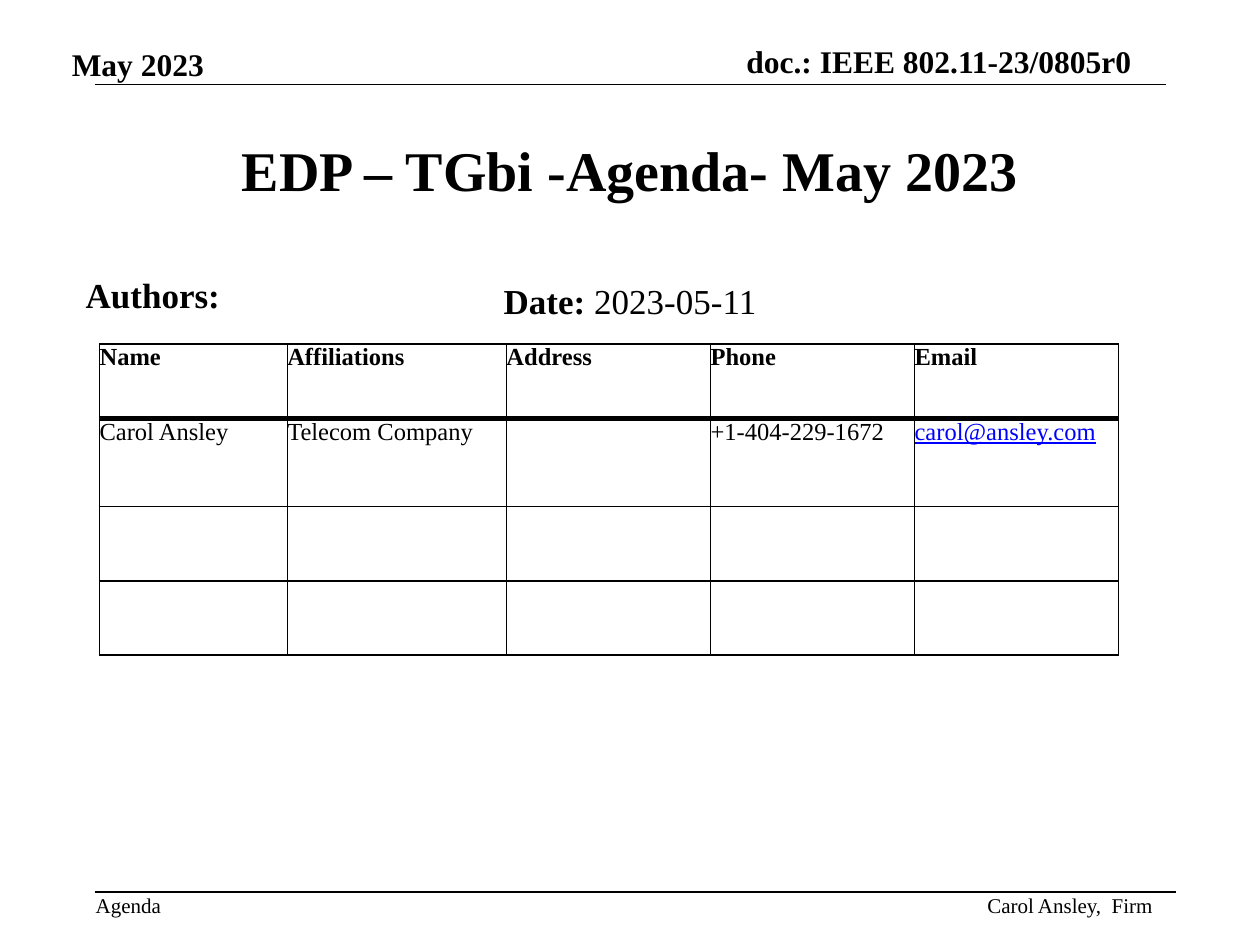
from dataclasses import dataclass

from lxml.etree import SubElement
from pptx import Presentation
from pptx.dml.color import RGBColor
from pptx.enum.shapes import MSO_CONNECTOR
from pptx.enum.text import MSO_ANCHOR as Anchor, MSO_AUTO_SIZE as Fit, PP_ALIGN as Align
from pptx.oxml.ns import qn
from pptx.util import Inches, Pt

BLACK = RGBColor(0x00, 0x00, 0x00)
BLUE = RGBColor(0x00, 0x00, 0xFF)
FONT = "Times New Roman"
THIN, THICK = 0.96, 3


@dataclass
class Label:
    text: str
    left: float
    top: float
    width: float
    height: float
    size: int
    bold: bool = False
    align: Align = Align.LEFT
    inset: float = 0
    wrap: bool = False
    anchor: Anchor = Anchor.TOP


@dataclass
class Rule:
    left: float
    right: float
    y: float


LABELS = [
    Label("May 2023", 0.57, 0.36, 1.06, 0.3, 18, True, anchor=Anchor.BOTTOM),
    Label("doc.: IEEE 802.11-23/0805r0", 5.88, 0.33, 3.1, 0.3, 18, True,
          Align.RIGHT, anchor=Anchor.BOTTOM),
    Label("Agenda", 0.76, 7.08, 0.53, 0.2, 12),
    Label("Carol Ansley,  Firm", 7.85, 7.08, 1.3, 0.2, 12, align=Align.RIGHT,
          anchor=Anchor.BOTTOM),
    Label("Authors:", 0.63, 2.12, 1.48, 0.41, 20, True, inset=0.05, wrap=True),
]
RULES = [Rule(0.75, 9.25, 0.67), Rule(0.75, 9.33, 7.08)]

COLS = [1.49, 1.74, 1.62, 1.62, 1.62]
ROWS = [0.59, 0.7, 0.59, 0.59]
CELLS = [
    ["Name", "Affiliations", "Address", "Phone", "Email"],
    ["Carol Ansley", "Telecom Company", "", "+1-404-229-1672", "carol@ansley.com"],
]


def add_run(para, text: str, size: int, bold: bool = False, color: RGBColor = BLACK):
    run = para.add_run()
    run.text = text
    font = run.font
    font.name, font.size, font.bold = FONT, Pt(size), bold
    font.color.rgb = color
    return run


def set_frame(frame, inset: float, anchor: Anchor, wrap: bool = True) -> None:
    frame.auto_size = Fit.NONE
    frame.word_wrap = wrap
    frame.vertical_anchor = anchor
    frame.margin_left = frame.margin_right = Inches(inset)
    frame.margin_top = frame.margin_bottom = Inches(inset)


def place(shape, left: float, top: float, width: float, height: float) -> None:
    shape.left, shape.top = Inches(left), Inches(top)
    shape.width, shape.height = Inches(width), Inches(height)


def add_label(slide, item: Label) -> None:
    box = slide.shapes.add_textbox(Inches(item.left), Inches(item.top),
                                   Inches(item.width), Inches(item.height))
    set_frame(box.text_frame, item.inset, item.anchor, item.wrap)
    para = box.text_frame.paragraphs[0]
    para.alignment = item.align
    add_run(para, item.text, item.size, item.bold)


def add_rule(slide, rule: Rule) -> None:
    line = slide.shapes.add_connector(MSO_CONNECTOR.STRAIGHT, Inches(rule.left),
                                      Inches(rule.y), Inches(rule.right), Inches(rule.y))
    line.line.color.rgb = BLACK
    line.line.width = Pt(1)
    SubElement(line._element.spPr, qn("a:effectLst"))


def set_edges(cell, top: float, bottom: float) -> None:
    props = cell._tc.get_or_add_tcPr()
    for side, width in zip("LRTB", (THIN, THIN, top, bottom)):
        edge = SubElement(props, qn(f"a:ln{side}"), w=str(Pt(width)))
        fill = SubElement(edge, qn("a:solidFill"))
        SubElement(fill, qn("a:srgbClr"), val=str(BLACK))


def add_people(slide) -> None:
    table = slide.shapes.add_table(len(ROWS), len(COLS), Inches(0.79), Inches(2.73),
                                   Inches(sum(COLS)), Inches(sum(ROWS))).table
    table.first_row = table.horz_banding = False
    for col, width in zip(table.columns, COLS):
        col.width = Inches(width)
    for r, height in enumerate(ROWS):
        table.rows[r].height = Inches(height)
        for c in range(len(COLS)):
            cell = table.cell(r, c)
            cell.margin_left = cell.margin_right = 0
            cell.margin_top = cell.margin_bottom = 0
            set_edges(cell, THICK if r == 1 else THIN, THICK if r == 0 else THIN)
            cell.fill.background()
            text = CELLS[r][c] if r < len(CELLS) else ""
            if text:
                mail = "@" in text
                run = add_run(cell.text_frame.paragraphs[0], text, 14, r == 0,
                              BLUE if mail else BLACK)
                run.font.underline = mail


def main() -> None:
    deck = Presentation()
    deck.slide_width, deck.slide_height = Inches(10), Inches(7.5)
    slide = deck.slides.add_slide(deck.slide_layouts[1])

    # Header and footer rules
    for rule in RULES:
        add_rule(slide, rule)

    # Title
    title = slide.shapes.title
    place(title, 0.75, 1.02, 8.5, 0.64)
    set_frame(title.text_frame, 0.05, Anchor.MIDDLE)
    para = title.text_frame.paragraphs[0]
    para.alignment = Align.CENTER
    add_run(para, "EDP – TGbi -Agenda- May 2023", 32, True)

    # Date line
    body = slide.placeholders[1]
    place(body, 0.75, 2.17, 8.5, 0.44)
    set_frame(body.text_frame, 0.05, Anchor.TOP)
    para = body.text_frame.paragraphs[0]
    props = para._p.get_or_add_pPr()
    props.set("marL", "0")
    props.set("indent", "0")
    SubElement(props, qn("a:buNone"))
    para.alignment = Align.CENTER
    para.space_before = Pt(0)
    add_run(para, "Date: ", 20, True)
    add_run(para, "2023-05-11", 20)

    # Labels and author table
    for item in LABELS:
        add_label(slide, item)
    add_people(slide)

    deck.save("out.pptx")


if __name__ == "__main__":
    main()
